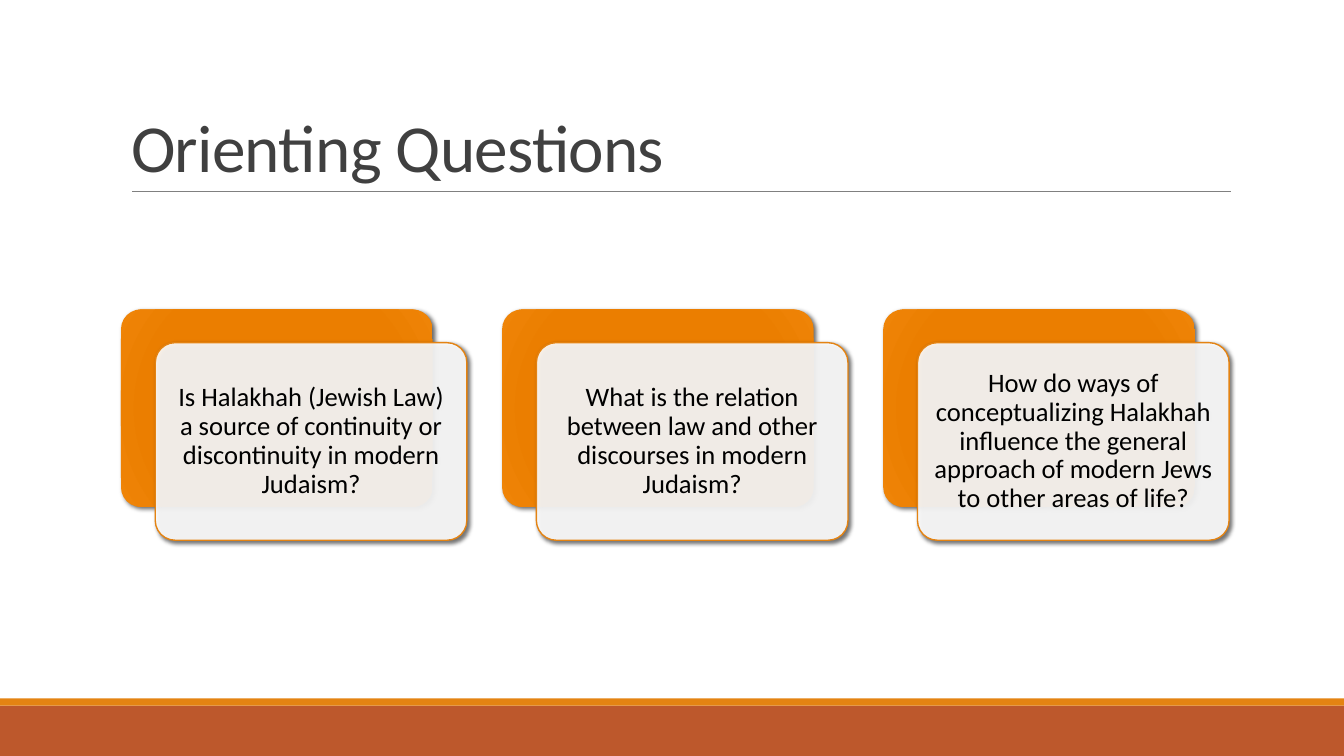
from dataclasses import dataclass

from lxml import etree
from pptx import Presentation
from pptx.dml.color import RGBColor
from pptx.enum.shapes import MSO_CONNECTOR as Link, MSO_SHAPE as Kind
from pptx.enum.text import MSO_ANCHOR as Anchor, PP_ALIGN as Align
from pptx.oxml import parse_xml
from pptx.oxml.ns import nsdecls, qn
from pptx.shapes.autoshape import Shape
from pptx.slide import Slide
from pptx.text.text import TextFrame
from pptx.util import Inches, Pt

FONT = "Calibri"
ORANGE = RGBColor(0xE4, 0x83, 0x12)
RUST = RGBColor(0xBD, 0x58, 0x2C)
GRAY = RGBColor(0x80, 0x80, 0x80)
DARK = RGBColor(0x40, 0x40, 0x40)
BLACK = RGBColor(0, 0, 0)
WHITE = RGBColor(0xFF, 0xFF, 0xFF)
STOPS = (
    (0, RGBColor(0xE5, 0x7B, 0x00)),
    (34, RGBColor(0xE8, 0x7D, 0x00)),
    (70, RGBColor(0xEB, 0x7E, 0x00)),
    (100, RGBColor(0xEF, 0x84, 0x07)),
)

LEFT, TOP = 1.2, 3.07
PITCH = 3.78
SHIFT_X, SHIFT_Y = 0.34, 0.33
WIDTH, HEIGHT = 3.09, 1.96

QUESTIONS = (
    "Is Halakhah (Jewish Law) a source of continuity or discontinuity in modern Judaism?",
    "What is the relation between law and other discourses in modern Judaism?",
    "How do ways of conceptualizing Halakhah influence the general approach of modern Jews "
    "to other areas of life?",
)


@dataclass(frozen=True)
class Band:
    top: float
    height: float
    color: RGBColor


BANDS = (Band(7, 0.5, RUST), Band(6.93, 0.07, ORANGE))


def add_band(slide: Slide, band: Band) -> None:
    bar = slide.shapes.add_shape(
        Kind.RECTANGLE, 0, Inches(band.top), Inches(13.33), Inches(band.height)
    )
    bar.shadow.inherit = False
    bar.fill.solid()
    bar.fill.fore_color.rgb = band.color
    bar.line.fill.background()


def add_rule(slide: Slide) -> None:
    rule = slide.shapes.add_connector(
        Link.STRAIGHT, Inches(1.31), Inches(1.9), Inches(12.21), Inches(1.9)
    )
    rule.line.color.rgb = GRAY
    rule.line.width = Pt(0.5)
    etree.SubElement(rule._element.spPr, qn("a:effectLst"))


def style_text(frame: TextFrame, size: float, color: RGBColor, spacing: float) -> None:
    para = frame.paragraphs[0]
    para.line_spacing = spacing
    font = para.runs[0].font
    font.name, font.size, font.color.rgb = FONT, Pt(size), color


def add_title(slide: Slide) -> None:
    title = slide.shapes.title
    title.left, title.top = Inches(1.2), Inches(0.31)
    title.width, title.height = Inches(11), Inches(1.59)
    frame = title.text_frame
    frame.text = "Orienting Questions"
    frame.vertical_anchor = Anchor.BOTTOM
    para = frame.paragraphs[0]
    para.alignment = Align.LEFT
    style_text(frame, 48, DARK, 0.85)
    para.runs[0].font._element.set("spc", "-50")


def add_card(slide: Slide, left: float, top: float, blur: float) -> Shape:
    """Add a rounded card with a soft shadow to its lower right."""
    card = slide.shapes.add_shape(
        Kind.ROUNDED_RECTANGLE, Inches(left), Inches(top), Inches(WIDTH), Inches(HEIGHT)
    )
    card.adjustments[0] = 0.1
    card.shadow.inherit = False
    effects = card._element.spPr.find(qn("a:effectLst"))
    effects.append(parse_xml(
        f'<a:outerShdw {nsdecls("a")} blurRad="{Pt(blur)}" dist="{Pt(2)}" dir="2700000" '
        'algn="br" rotWithShape="0"><a:srgbClr val="000000"><a:alpha val="60000"/>'
        '</a:srgbClr></a:outerShdw>'
    ))
    return card


def add_back(slide: Slide, left: float) -> None:
    card = add_card(slide, left, TOP, 3.5)
    card.line.fill.background()
    card.fill.background()
    stops = "".join(
        f'<a:gs pos="{pos * 1000}"><a:srgbClr val="{color}"/></a:gs>' for pos, color in STOPS
    )
    props = card._element.spPr
    props.replace(props.find(qn("a:noFill")), parse_xml(
        f'<a:gradFill {nsdecls("a")} rotWithShape="1"><a:gsLst>{stops}</a:gsLst>'
        '<a:path path="circle"><a:fillToRect l="100000" t="100000" r="100000" b="100000"/>'
        '</a:path></a:gradFill>'
    ))


def add_front(slide: Slide, left: float, text: str) -> None:
    card = add_card(slide, left + SHIFT_X, TOP + SHIFT_Y, 3)
    card.fill.solid()
    card.fill.fore_color.rgb = WHITE
    tint = card._element.spPr.find(qn("a:solidFill")).find(qn("a:srgbClr"))
    etree.SubElement(tint, qn("a:alpha")).set("val", "90000")
    card.line.color.rgb = ORANGE
    card.line.width = Pt(1)
    frame = card.text_frame
    frame.text = text
    frame.word_wrap = True
    frame.vertical_anchor = Anchor.MIDDLE
    frame.margin_left = frame.margin_right = Inches(0.08)
    frame.margin_top = frame.margin_bottom = Inches(0.08)
    frame.paragraphs[0].alignment = Align.CENTER
    style_text(frame, 19, BLACK, 0.9)


def main() -> None:
    deck = Presentation()
    deck.slide_width, deck.slide_height = Inches(13.33), Inches(7.5)
    slide = deck.slides.add_slide(deck.slide_layouts[5])
    for band in BANDS:
        add_band(slide, band)
    add_rule(slide)
    add_title(slide)
    for index, text in enumerate(QUESTIONS):
        left = LEFT + index * PITCH
        add_back(slide, left)
        add_front(slide, left, text)
    deck.save("out.pptx")


if __name__ == "__main__":
    main()
